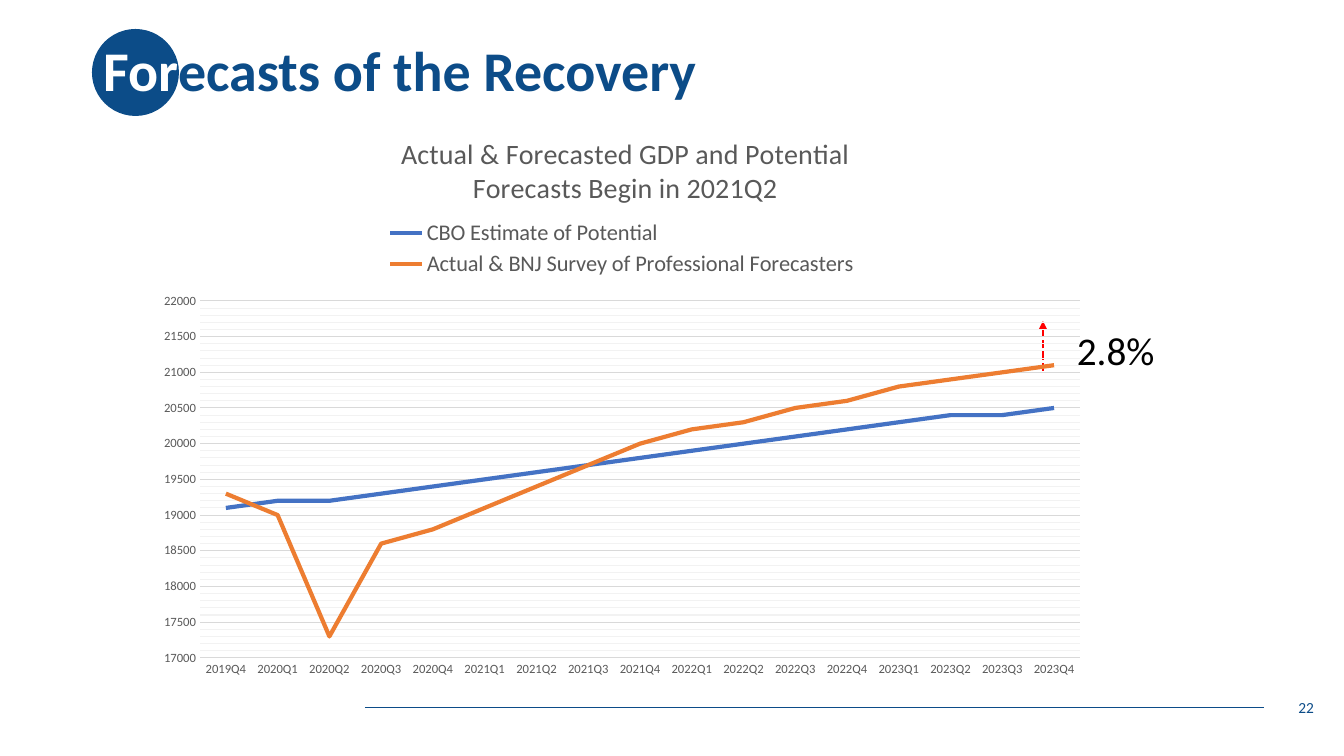
from lxml import etree
from pptx import Presentation
from pptx import util as u
from pptx.chart.data import CategoryChartData
from pptx.dml.color import RGBColor
from pptx.enum import chart as ch
from pptx.enum import dml, shapes, text
from pptx.oxml import parse_xml
from pptx.oxml.ns import nsdecls, qn

PX = 914400 / 100.8
FONT = "Calibri"
COLORS = {
    "navy": "0C4C88", "white": "FFFFFF", "black": "000000", "red": "FF0000",
    "grey": "595959", "grid": "D9D9D9", "minor": "F2F2F2",
    "blue": "4472C4", "orange": "ED7D31",
}
QUARTERS = ["2019Q4"] + [f"{year}Q{q}" for year in range(2020, 2024) for q in range(1, 5)]
SERIES = [
    ("CBO Estimate of Potential", "blue",
     [19100, 19200, 19200, 19300, 19400, 19500, 19600, 19700, 19800,
      19900, 20000, 20100, 20200, 20300, 20400, 20400, 20500]),
    ("Actual & BNJ Survey of Professional Forecasters", "orange",
     [19300, 19000, 17300, 18600, 18800, 19100, 19400, 19700, 20000,
      20200, 20300, 20500, 20600, 20800, 20900, 21000, 21100]),
]


def px(*lengths):
    return [u.Emu(round(length * PX)) for length in lengths]


def color(name):
    return RGBColor.from_string(COLORS[name])


def style_font(font, size, name, bold=False):
    font.name, font.size, font.bold = FONT, u.Pt(size), bold
    font.color.rgb = color(name)


def add_span(para, words, size, name, bold=False):
    span = para.add_run()
    span.text = words
    style_font(span.font, size, name, bold)


def style_line(line, name, width):
    line.color.rgb = color(name)
    line.width = u.Pt(width)


def add_line(parent, x1, y1, x2, y2, name, width):
    line = parent.add_connector(shapes.MSO_CONNECTOR.STRAIGHT, *px(x1, y1, x2, y2))
    style_line(line.line, name, width)
    etree.SubElement(line._element.spPr, qn("a:effectLst"))
    return line


def add_label(parent, box, words, size, name, align, anchor):
    label = parent.add_textbox(*px(*box))
    frame = label.text_frame
    frame.word_wrap = True
    frame.vertical_anchor = anchor
    para = frame.paragraphs[0]
    para.alignment = align
    add_span(para, words, size, name)


def add_heading(page, left, top, width, height):
    # Disc behind the first letters
    disc = page.shapes.add_shape(shapes.MSO_SHAPE.OVAL, *px(left - 1, top + 29, 87, 87))
    disc.shadow.inherit = False
    disc.fill.solid()
    disc.fill.fore_color.rgb = color("navy")
    disc.line.fill.background()
    # Title, raised above the disc
    title = page.shapes.title
    title.left, title.top, title.width, title.height = px(left, top, width, height)
    disc._element.addnext(title._element)
    frame = title.text_frame
    frame.word_wrap = True
    frame.vertical_anchor = text.MSO_ANCHOR.MIDDLE
    para = frame.paragraphs[0]
    para.alignment = text.PP_ALIGN.LEFT
    para.line_spacing = 0.9
    add_span(para, "For", 40, "white", True)
    add_span(para, "ecasts of the Recovery", 40, "navy", True)


def add_footer(page, left, top, width, height):
    middle = top + height // 2
    add_line(page.shapes, left, middle, left + 899, middle, "navy", 0.5)
    add_label(page.shapes, (left + width - 302, top, 302, height), "22", 11, "navy",
              text.PP_ALIGN.RIGHT, text.MSO_ANCHOR.MIDDLE)


def add_gap_note(page, left, top, width, height):
    group = page.shapes.add_group_shape().shapes
    add_label(group, (left + 24, top, width - 24, height), "2.8%", 28, "black",
              text.PP_ALIGN.LEFT, text.MSO_ANCHOR.TOP)
    arrow = add_line(group, left, top + 50, left, top, "red", 2)
    arrow.line.dash_style = dml.MSO_LINE.SQUARE_DOT
    etree.SubElement(arrow._element.spPr.find(qn("a:ln")), qn("a:tailEnd"), type="triangle")


def layout_xml(x, y, w=None, h=None, inner=False):
    target = '<c:layoutTarget val="inner"/>' if inner else ""
    size = f'<c:w val="{w:.4f}"/><c:h val="{h:.4f}"/>' if w else ""
    return parse_xml(
        f'<c:layout {nsdecls("c")}><c:manualLayout>{target}'
        '<c:xMode val="edge"/><c:yMode val="edge"/>'
        f'<c:x val="{x:.4f}"/><c:y val="{y:.4f}"/>{size}</c:manualLayout></c:layout>')


def place(element, after, layout):
    for old in element.findall(qn("c:layout")):
        element.remove(old)
    if after is None:
        element.insert(0, layout)
    else:
        element.find(qn(after)).addnext(layout)


def style_minor_grid(axis, name, width):
    axis.has_minor_gridlines = True
    axis._element.find(qn("c:minorGridlines")).append(parse_xml(
        f'<c:spPr {nsdecls("c", "a")}><a:ln w="{u.Pt(width)}"><a:solidFill>'
        f'<a:srgbClr val="{COLORS[name]}"/></a:solidFill></a:ln></c:spPr>'))


def add_gdp_chart(page, left, top, width, height):
    data = CategoryChartData()
    data.categories = QUARTERS
    for name, _, values in SERIES:
        data.add_series(name, values)
    chart = page.shapes.add_chart(
        ch.XL_CHART_TYPE.LINE, *px(left, top, width, height), data).chart
    style_font(chart.font, 10, "black")

    # Heading and legend
    chart.has_title = True
    frame = chart.chart_title.text_frame
    for i, words in enumerate(["Actual & Forecasted GDP and Potential",
                               "Forecasts Begin in 2021Q2"]):
        para = frame.add_paragraph() if i else frame.paragraphs[0]
        add_span(para, words, 20, "grey")
    chart.chart_title.include_in_layout = False
    chart.has_legend = True
    chart.legend.position = ch.XL_LEGEND_POSITION.TOP
    chart.legend.include_in_layout = False
    style_font(chart.legend.font, 16, "grey")

    # Axes
    quarters, dollars = chart.category_axis, chart.value_axis
    for axis in (quarters, dollars):
        style_font(axis.tick_labels.font, 9, "grey")
        axis.major_tick_mark = axis.minor_tick_mark = ch.XL_TICK_MARK.NONE
    style_line(quarters.format.line, "grid", 0.75)
    dollars.format.line.fill.background()
    dollars.minimum_scale, dollars.maximum_scale = 17000, 22000
    dollars.major_unit, dollars.minor_unit = 500, 100
    style_line(dollars.major_gridlines.format.line, "grid", 0.75)
    style_minor_grid(dollars, "minor", 0.75)
    dollars.tick_labels.number_format = "0"
    dollars.tick_labels.number_format_is_linked = False

    # Lines
    plot = chart.plots[0]
    plot.vary_by_categories = False
    for series, (_, name, _) in zip(plot.series, SERIES):
        series.smooth = False
        series.marker.style = ch.XL_MARKER_STYLE.NONE
        style_line(series.format.line, name, 3)

    # Positions inside the chart
    area = chart._chartSpace.chart
    place(area.find(qn("c:title")), "c:tx", layout_xml(253 / width, 21 / height))
    place(area.find(qn("c:legend")), "c:legendPos",
          layout_xml(237 / width, 105 / height, 480 / width, 65 / height))
    place(area.plotArea, None,
          layout_xml(55 / width, 190 / height, 880 / width, 357 / height, True))


def main():
    deck = Presentation()
    deck.slide_width, deck.slide_height = px(1344, 756)
    page = deck.slides.add_slide(deck.slide_layouts[5])
    add_heading(page, 93, 0, 1159, 146)
    add_footer(page, 365, 687, 959, 40)
    add_gap_note(page, 1043, 321, 180, 57)
    add_gdp_chart(page, 145, 111, 955, 578)
    deck.save("out.pptx")


if __name__ == "__main__":
    main()
